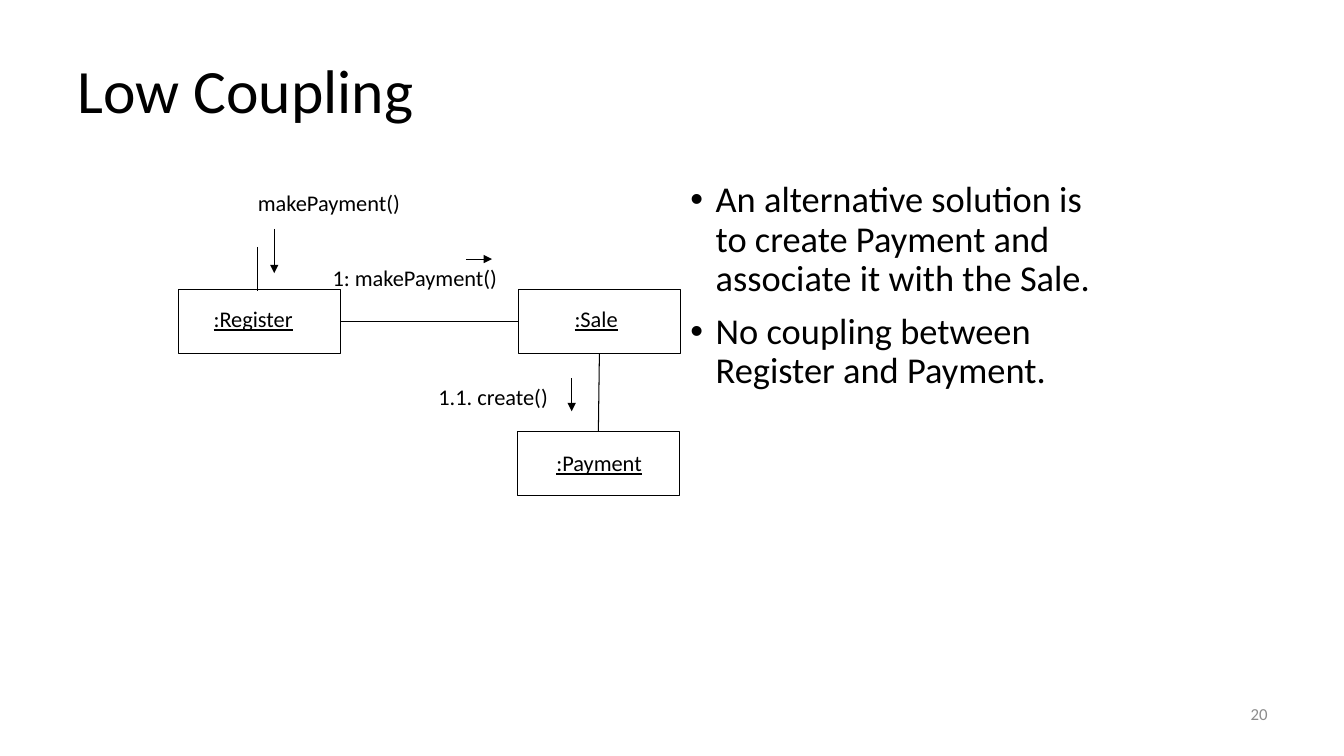
from lxml import etree
from pptx import Presentation
from pptx.dml.color import RGBColor
from pptx.enum.shapes import MSO_CONNECTOR, MSO_SHAPE
from pptx.enum.text import MSO_ANCHOR, MSO_AUTO_SIZE, PP_ALIGN
from pptx.oxml.ns import qn
from pptx.util import Inches, Pt

BLACK = RGBColor(0x00, 0x00, 0x00)
GRAY = RGBColor(0x8C, 0x8C, 0x8C)
FONT = "Calibri"
STRAIGHT = MSO_CONNECTOR.STRAIGHT
RECTANGLE = MSO_SHAPE.RECTANGLE
TOP, MIDDLE = MSO_ANCHOR.TOP, MSO_ANCHOR.MIDDLE
LEFT, RIGHT = PP_ALIGN.LEFT, PP_ALIGN.RIGHT
FIT_SHAPE = MSO_AUTO_SIZE.SHAPE_TO_FIT_TEXT
SIDE_TOP, SIDE_LEFT, SIDE_BOTTOM, SIDE_RIGHT = range(4)

TITLE = "Low Coupling"
PAGE_NUMBER = "20"
BULLETS = [
    "An alternative solution is to create Payment and associate it with the Sale.",
    "No coupling between Register and Payment.",
]
OBJECT_SIZE = (1.61, 0.64)
OBJECTS = {"Register": (1.77, 2.87), "Sale": (5.14, 2.87), "Payment": (5.13, 4.28)}
LABEL_HEIGHT = 0.37
LABELS = [
    (":Register", 2.02, 2.98, 1.0, True),
    (":Sale", 5.6, 2.98, 0.63, True),
    (":Payment", 5.42, 4.41, 1.06, True),
    ("makePayment()", 2.46, 1.83, 1.63, False),
    ("1: makePayment()", 3.2, 2.57, 1.85, False),
    ("1.1. create()", 4.25, 3.75, 1.3, False),
]
LINKS = [
    ("Register", SIDE_RIGHT, "Sale", SIDE_LEFT, 0.25),
    ("Sale", SIDE_BOTTOM, "Payment", SIDE_TOP, 0.75),
]
LINES = [
    ((4.62, 2.57), (4.88, 2.57), 0.25, True),
    ((2.55, 2.45), (2.55, 2.89), 0.75, False),
    ((2.72, 2.27), (2.72, 2.71), 0.75, True),
    ((5.67, 3.75), (5.67, 4.08), 0.75, True),
]


def add_text(page, area, lines, size, color=BLACK, anchor=TOP, align=LEFT, wrap=True):
    box = page.shapes.add_textbox(*map(Inches, area))
    frame = box.text_frame
    frame.word_wrap = wrap
    frame.vertical_anchor = anchor
    frame.text = "\n".join(lines)
    for para in frame.paragraphs:
        para.alignment = align
        para.font.name = FONT
        para.font.size = Pt(size)
        para.font.color.rgb = color
    return frame


def add_bullet(para):
    para.line_spacing = 0.9
    para.space_before = Pt(10)
    settings = para._p.get_or_add_pPr()
    settings.set("marL", str(Inches(0.25)))
    settings.set("indent", str(Inches(-0.25)))
    font = etree.Element(qn("a:buFont"), typeface="Arial")
    mark = etree.Element(qn("a:buChar"), char="•")
    defaults = settings.find(qn("a:defRPr"))
    defaults.addprevious(font)
    defaults.addprevious(mark)


def add_line(page, start, end, width, arrow=False):
    line = page.shapes.add_connector(STRAIGHT, *map(Inches, start + end))
    line.line.color.rgb = BLACK
    line.line.width = Pt(width)
    if arrow:
        etree.SubElement(line.line._get_or_add_ln(), qn("a:tailEnd"), type="triangle")
    etree.SubElement(line._element.spPr, qn("a:effectLst"))
    return line


def main():
    deck = Presentation()
    deck.slide_width, deck.slide_height = Inches(13.33), Inches(7.5)
    page = deck.slides.add_slide(deck.slide_layouts[6])

    add_text(page, (9.56, 6.83, 3.11, 0.5), [PAGE_NUMBER], 12, GRAY, MIDDLE, RIGHT)
    title = add_text(page, (0.67, 0.3, 12, 1.25), [TITLE], 44, anchor=MIDDLE)
    title.paragraphs[0].line_spacing = 0.9
    body = add_text(page, (6.75, 1.75, 4.41, 4.95), BULLETS, 26)
    for para in body.paragraphs:
        add_bullet(para)

    boxes = {}
    for name, corner in OBJECTS.items():
        box = page.shapes.add_shape(RECTANGLE, *map(Inches, corner + OBJECT_SIZE))
        box.shadow.inherit = False
        box.fill.background()
        box.line.color.rgb = BLACK
        box.line.width = Pt(0.75)
        boxes[name] = box

    for text, left, top, width, underlined in LABELS:
        label = add_text(page, (left, top, width, LABEL_HEIGHT), [text], 16, wrap=False)
        label.auto_size = FIT_SHAPE
        label.paragraphs[0].font.underline = underlined

    for source, source_side, target, target_side, width in LINKS:
        link = add_line(page, (0, 0), (0, 0), width)
        link.begin_connect(boxes[source], source_side)
        link.end_connect(boxes[target], target_side)
    for start, end, width, arrow in LINES:
        add_line(page, start, end, width, arrow)

    deck.save("out.pptx")


if __name__ == "__main__":
    main()
